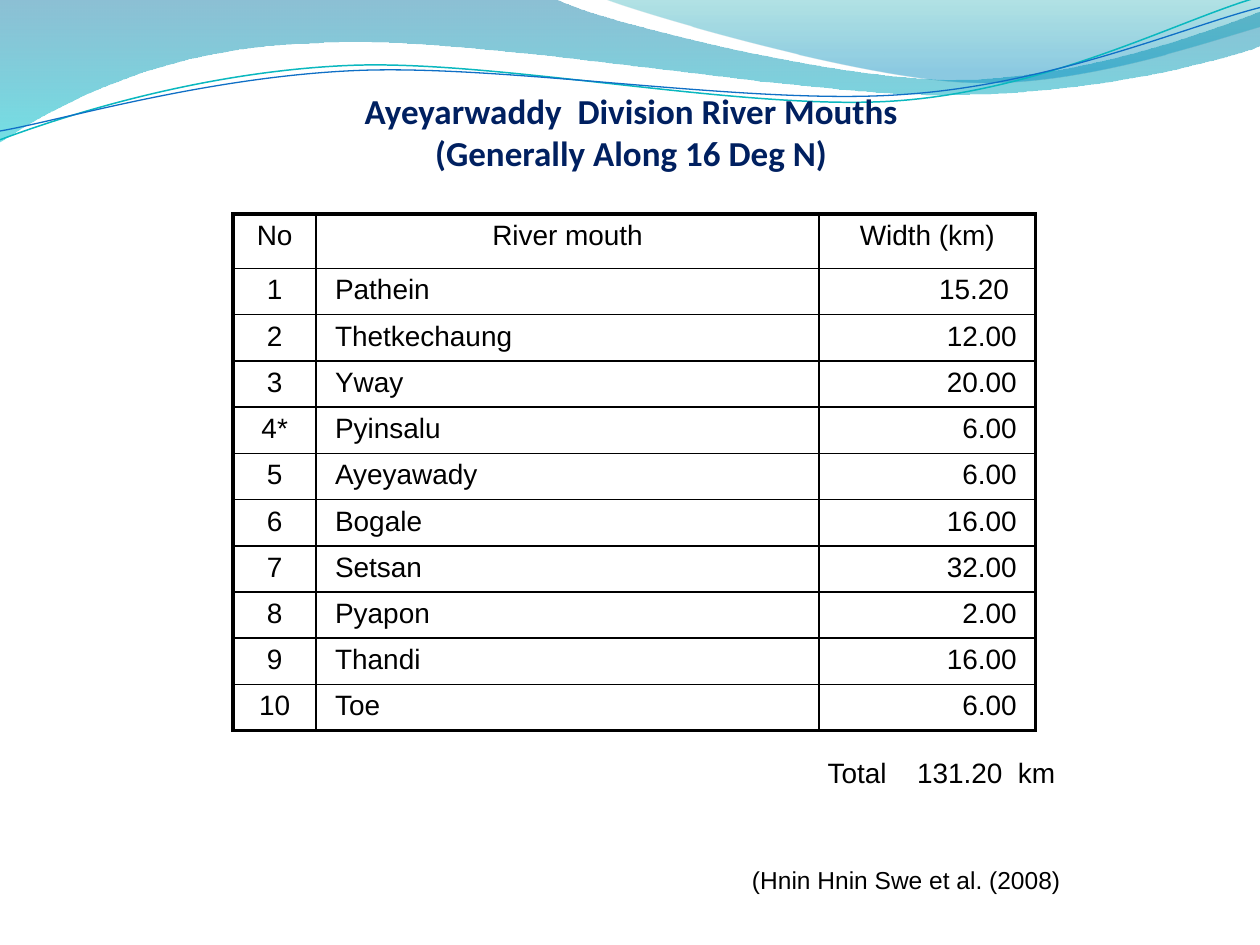
from lxml import etree
from pptx import Presentation
from pptx import util as u
from pptx.dml.color import RGBColor
from pptx.enum import text
from pptx.oxml.ns import qn

BLACK = RGBColor(0, 0, 0)
NAVY = RGBColor(0x00, 0x20, 0x60)
TEAL = RGBColor(0x0A, 0xB8, 0xBF)
BLUE = RGBColor(0x0F, 0x6F, 0xC6)
DEEP = RGBColor(0x00, 0x74, 0xA1)
CYAN = RGBColor(0x00, 0xC6, 0xCF)
GREEN = RGBColor(0x00, 0xA1, 0xA9)
SKY = RGBColor(0x00, 0x8B, 0xBF)

# Content
TITLE = "Ayeyarwaddy  Division River Mouths\v(Generally Along 16 Deg N)"
ROWS = [
    ("No", "River mouth", "Width (km)"),
    ("1", "Pathein", "15.20 "),
    ("2", "Thetkechaung", "12.00"),
    ("3", "Yway", "20.00"),
    ("4*", "Pyinsalu", "6.00"),
    ("5", "Ayeyawady", "6.00"),
    ("6", "Bogale", "16.00"),
    ("7", "Setsan", "32.00"),
    ("8", "Pyapon", "2.00"),
    ("9", "Thandi", "16.00"),
    ("10", "Toe", "6.00"),
]
TOTAL = "Total\t131.20\tkm"
TABS = (0.71, 1.51)
CREDIT = "(Hnin Hnin Swe et al. (2008)"

# Waves: two numbers are a line's end, six are a curve
BANDS = [
    ([(0, 0), (4.4, -0.01), (4.76, 0.17, 6.64, 0.63, 7.58, 0.63),
      (8.53, 0.63, 9.58, 0.26, 10, 0.09), (10.01, 0.36),
      (9.83, 0.44, 8.7, 0.76, 7.46, 0.75),
      (6.22, 0.75, 3.82, 0.28, 2.57, 0.34),
      (1.29, 0.36, 0.46, 0.83, -0.01, 1.13)],
     [(0, DEEP, 45), (1, CYAN, 55)]),
    ([(4.79, -0.01), (5.09, 0.11, 6.82, 0.62, 7.69, 0.65),
      (8.56, 0.69, 9.61, 0.32, 10, 0.21), (10, 0)],
     [(0, GREEN, 30), (0.8, SKY, 45)]),
]
LINES = [
    ([(0, 1.11), (0.48, 0.93, 1.58, 0.57, 2.77, 0.52),
      (3.95, 0.47, 5.93, 0.89, 7.13, 0.8),
      (8.33, 0.71, 9.38, 0.15, 9.98, -0.02)], TEAL, 0.85),
    ([(0, 1.04), (0.47, 0.96, 1.64, 0.61, 2.83, 0.56),
      (4.03, 0.51, 5.97, 0.84, 7.17, 0.75),
      (8.36, 0.67, 9.41, 0.21, 10, 0.06)], BLUE, 0.75),
]

# Formats
ALIGN = text.PP_ALIGN
HEAD = dict(name="Calibri", size=u.Pt(20), bold=True)
BODY = dict(name="Arial", size=u.Pt(16))
SMALL = dict(name="Arial", size=u.Pt(14))
INSET = dict(margin_left=u.Inches(0.15), margin_right=u.Inches(0.15),
             margin_top=u.Inches(0.05), margin_bottom=u.Inches(0.05))
COLS = (0.66, 3.99, 1.72)
SIDES = (ALIGN.CENTER, ALIGN.LEFT, ALIGN.RIGHT)
TOP, HIGH = 0.43, 4.1
THICK, THIN = 2.25, 1

prs = Presentation()
prs.slide_width, prs.slide_height = u.Inches(10), u.Inches(7.5)
slide = prs.slides.add_slide(prs.slide_layouts[6])


def draw(steps, close):
    """Lay out all points as lines, then join each curve's three points."""
    pts = [tuple(map(u.Inches, step[i:i + 2]))
           for step in steps for i in range(0, len(step), 2)]
    pen = slide.shapes.build_freeform(*pts[0])
    pen.add_line_segments(pts[1:], close=close)
    shape = pen.convert_to_shape()
    shape.shadow.inherit = False
    legs = iter(list(shape._element.spPr.iter(qn("a:lnTo"))))
    for step in steps[1:]:
        leg = next(legs)
        if len(step) == 6:
            leg.tag = qn("a:cubicBezTo")
            for _ in range(2):
                extra = next(legs)
                leg.append(extra[0])
                extra.getparent().remove(extra)
    return shape


def style(para, look, color=BLACK, align=ALIGN.LEFT):
    para.alignment = align
    for key, val in look.items():
        setattr(para.font, key, val)
    para.font.color.rgb = color


def label(words, box, look, color=BLACK, align=ALIGN.LEFT, wrap=True, tabs=()):
    frame = slide.shapes.add_textbox(*map(u.Inches, box)).text_frame
    frame.word_wrap = wrap
    para = frame.paragraphs[0]
    para.text = words
    if tabs:
        stops = etree.SubElement(para._p.get_or_add_pPr(), qn("a:tabLst"))
        for pos in tabs:
            etree.SubElement(stops, qn("a:tab"), pos=str(u.Inches(pos)), algn="l")
    style(para, look, color, align)
    return frame


def edge(cell, side, width):
    line = etree.SubElement(cell._tc.get_or_add_tcPr(), qn("a:ln" + side),
                            w=str(u.Pt(width)))
    fill = etree.SubElement(line, qn("a:solidFill"))
    etree.SubElement(fill, qn("a:srgbClr"), val=str(BLACK))


# Wave bands
for steps, stops in BANDS:
    band = draw(steps, True)
    band.line.fill.background()
    band.fill.gradient()
    band.fill.gradient_angle = 270
    for stop, (pos, color, _) in zip(band.fill.gradient_stops, stops):
        stop.position = pos
        stop.color.rgb = color
    tints = list(band._element.spPr.iter(qn("a:srgbClr")))
    for tint, (_, _, alpha) in zip(tints, stops):
        etree.SubElement(tint, qn("a:alpha"), val=str(alpha * 1000))

# Wave lines
for steps, color, width in LINES:
    wave = draw(steps, False)
    wave.fill.background()
    wave.line.color.rgb = color
    wave.line.width = u.Pt(width)

# Title
head = label(TITLE, (0.51, 0.59, 9, 0.79), HEAD, NAVY, ALIGN.CENTER)
head.vertical_anchor = text.MSO_ANCHOR.BOTTOM
head.margin_left = head.margin_right = head.margin_bottom = 0

# Table of river mouths
last, end = len(ROWS) - 1, len(COLS) - 1
grid = slide.shapes.add_table(len(ROWS), len(COLS), *map(
    u.Inches, (1.85, 1.7, sum(COLS), HIGH))).table
grid.first_row = grid.horz_banding = False
for col, width in zip(grid.columns, COLS):
    col.width = u.Inches(width)
for r, row in enumerate(ROWS):
    grid.rows[r].height = u.Inches((HIGH - TOP) / last if r else TOP)
    for c, words in enumerate(row):
        cell = grid.cell(r, c)
        for key, val in INSET.items():
            setattr(cell, key, val)
        cell.text = words
        style(cell.text_frame.paragraphs[0], BODY,
              align=SIDES[c] if r else ALIGN.CENTER)
        rims = dict(L=c == 0, R=c == end, T=r == 0, B=r == last)
        for side, rim in rims.items():
            edge(cell, side, THICK if rim else THIN)
        cell.fill.background()

# Total and credit
label(TOTAL, (6.47, 5.95, 2.05, 0.37), BODY, tabs=TABS)
label(CREDIT, (5.87, 6.82, 2.66, 0.34), SMALL, wrap=False)

prs.save("out.pptx")
